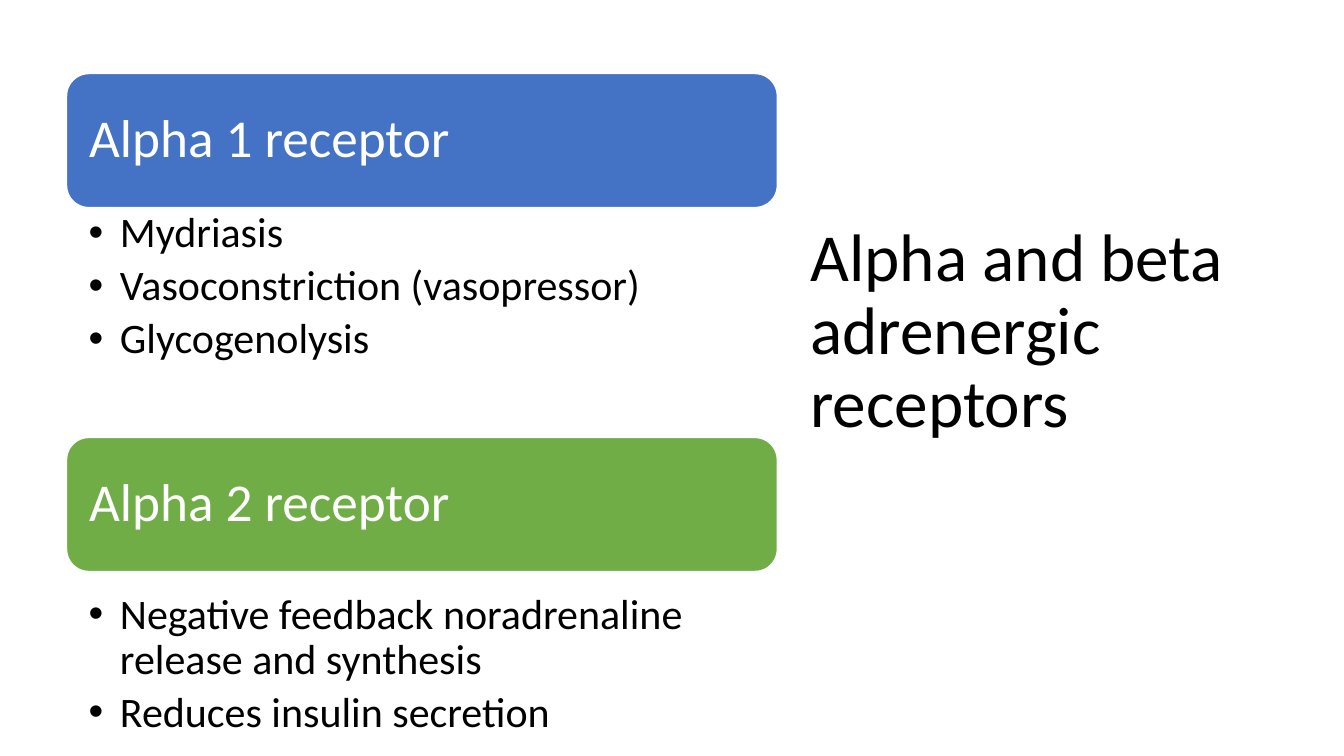
"""Build a slide on alpha and beta adrenergic receptors."""
from typing import NamedTuple

from lxml import etree
from pptx import Presentation
from pptx.dml.color import RGBColor
from pptx.enum.shapes import MSO_SHAPE
from pptx.enum.text import MSO_ANCHOR, PP_ALIGN
from pptx.oxml.ns import qn
from pptx.util import Inches, Pt

ROUNDED = MSO_SHAPE.ROUNDED_RECTANGLE
MIDDLE, TOP = MSO_ANCHOR.MIDDLE, MSO_ANCHOR.TOP
LEFT = PP_ALIGN.LEFT
FONT = "Calibri"
COLORS = {
    "white": "FFFFFF",
    "black": "000000",
    "blue": "4472C4",
    "green": "70AD47",
}
LIST_LEFT, LIST_WIDTH, HEADER_HEIGHT = 0.66, 7.05, 1.33


class Receptor(NamedTuple):
    """A receptor header and the effects listed below it."""
    name: str
    color: str
    top: float
    list_top: float
    list_height: float
    effects: list[str]


RECEPTORS = [
    Receptor("Alpha 1 receptor", "blue", 0.73, 2.06, 2.28,
             ["Mydriasis", "Vasoconstriction (vasopressor)", "Glycogenolysis"]),
    Receptor("Alpha 2 receptor", "green", 4.34, 5.84, 1.58,
             ["Negative feedback noradrenaline release and synthesis",
              "Reduces insulin secretion"]),
]


def rgb(name: str) -> RGBColor:
    """Return the named colour."""
    return RGBColor.from_string(COLORS[name])


def set_frame(tf, anchor, side: float, edge: float) -> None:
    """Set wrapping, anchor and insets of a text frame."""
    tf.word_wrap = True
    tf.vertical_anchor = anchor
    tf.margin_left = tf.margin_right = Inches(side)
    tf.margin_top = tf.margin_bottom = Inches(edge)


def add_bullet(p) -> None:
    """Give a paragraph a hanging bullet."""
    pPr = p._p.get_or_add_pPr()
    pPr.set("marL", str(Inches(0.31)))
    pPr.set("indent", str(-Inches(0.31)))
    etree.SubElement(pPr, qn("a:buFont"), typeface="Arial")
    etree.SubElement(pPr, qn("a:buChar"), char="•")


def write(p, text: str, size: float, color: str) -> None:
    """Write one run into a left-aligned paragraph."""
    p.alignment = LEFT
    p.line_spacing = 0.9
    r = p.add_run()
    r.text = text
    r.font.name = FONT
    r.font.size = Pt(size)
    r.font.color.rgb = rgb(color)


def add_title(s, text: str) -> None:
    """Add the slide heading on the right."""
    tf = s.shapes.add_textbox(Inches(7.94), Inches(0.29),
                              Inches(5.67), Inches(6.02)).text_frame
    set_frame(tf, MIDDLE, 0.1, 0.05)
    write(tf.paragraphs[0], text, 48, "black")


def add_header(s, receptor: Receptor) -> None:
    """Add the coloured header of a receptor."""
    sp = s.shapes.add_shape(ROUNDED, Inches(LIST_LEFT), Inches(receptor.top),
                            Inches(LIST_WIDTH), Inches(HEADER_HEIGHT))
    sp.shadow.inherit = False
    sp.fill.solid()
    sp.fill.fore_color.rgb = rgb(receptor.color)
    sp.line.color.rgb = rgb("white")
    sp.line.width = Pt(1)
    set_frame(sp.text_frame, MIDDLE, 0.16, 0.16)
    write(sp.text_frame.paragraphs[0], receptor.name, 38, "white")


def add_effects(s, receptor: Receptor) -> None:
    """Add the bulleted effects of a receptor."""
    tf = s.shapes.add_textbox(Inches(LIST_LEFT), Inches(receptor.list_top),
                              Inches(LIST_WIDTH),
                              Inches(receptor.list_height)).text_frame
    set_frame(tf, TOP, 0.22, 0.04)
    for i, effect in enumerate(receptor.effects):
        p = tf.add_paragraph() if i else tf.paragraphs[0]
        add_bullet(p)
        p.space_after = Pt(5.4)
        write(p, effect, 30, "black")


def main() -> None:
    """Build and save the presentation."""
    prs = Presentation()
    prs.slide_width, prs.slide_height = Inches(13.33), Inches(7.5)
    s = prs.slides.add_slide(prs.slide_layouts[6])
    add_title(s, "Alpha and beta adrenergic receptors")
    for receptor in RECEPTORS:
        add_header(s, receptor)
        add_effects(s, receptor)
    prs.save("out.pptx")


if __name__ == "__main__":
    main()
